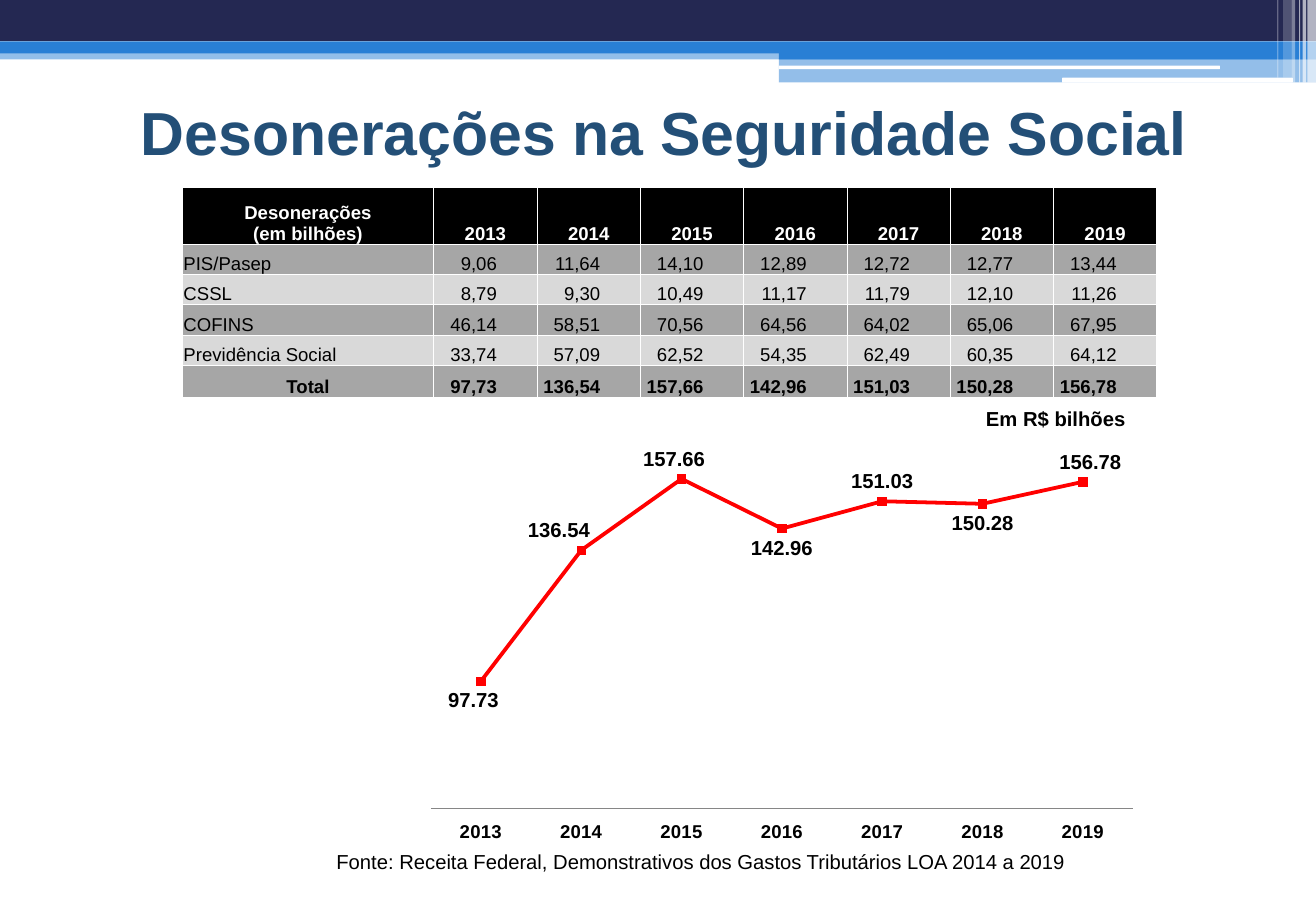
from lxml import etree
from pptx import Presentation
from pptx.chart.data import CategoryChartData
from pptx.dml.color import RGBColor
from pptx.enum.chart import XL_CHART_TYPE, XL_LABEL_POSITION, XL_MARKER_STYLE, XL_TICK_LABEL_POSITION, XL_TICK_MARK
from pptx.enum.shapes import MSO_SHAPE
from pptx.enum.text import MSO_ANCHOR, PP_ALIGN
from pptx.oxml import parse_xml
from pptx.oxml.ns import nsdecls, qn
from pptx.util import Pt

PX = 9144
RECT, ROUNDED = MSO_SHAPE.RECTANGLE, MSO_SHAPE.ROUNDED_RECTANGLE
LEFT, CENTER, RIGHT = PP_ALIGN.LEFT, PP_ALIGN.CENTER, PP_ALIGN.RIGHT
MIDDLE, BOTTOM = MSO_ANCHOR.MIDDLE, MSO_ANCHOR.BOTTOM
ABOVE, BELOW = XL_LABEL_POSITION.ABOVE, XL_LABEL_POSITION.BELOW
LINE_MARKERS, SQUARE = XL_CHART_TYPE.LINE_MARKERS, XL_MARKER_STYLE.SQUARE
NO_TICK, LOW = XL_TICK_MARK.NONE, XL_TICK_LABEL_POSITION.LOW

NAVY = RGBColor(0x24, 0x28, 0x52)
BLUE = RGBColor(0x29, 0x7F, 0xD5)
TITLE_BLUE = RGBColor(0x23, 0x4F, 0x77)
WHITE = RGBColor(0xFF, 0xFF, 0xFF)
BLACK = RGBColor(0, 0, 0)
DARK_BAND = RGBColor(0xA6, 0xA6, 0xA6)
LIGHT_BAND = RGBColor(0xD9, 0xD9, 0xD9)
AXIS_GRAY = RGBColor(0x86, 0x86, 0x86)
RED = RGBColor(0xFF, 0, 0)


def set_font(font, size, color=BLACK, bold=False):
    font.name = "Arial"
    font.size = Pt(size)
    font.bold = bold
    font.color.rgb = color


def place(layout, mode="factor", **fractions):
    manual = etree.SubElement(layout, qn("c:manualLayout"))
    if "w" in fractions:
        etree.SubElement(manual, qn("c:layoutTarget")).set("val", "inner")
    for axis in "xy":
        etree.SubElement(manual, qn(f"c:{axis}Mode")).set("val", mode)
    for name, fraction in fractions.items():
        etree.SubElement(manual, qn(f"c:{name}")).set("val", str(fraction))


deck = Presentation()
deck.slide_width, deck.slide_height = 1083 * PX, 750 * PX
slide = deck.slides.add_slide(deck.slide_layouts[5])

banner = [
    (RECT, 0, 40, 1083, 9, BLUE, 50),
    (RECT, 0, 0, 1083, 34, NAVY, 100),
    (RECT, 0, 34, 1083, 10, BLUE, 100),
    (RECT, 641, 39, 442, 10, BLUE, 100),
    (RECT, 641, 48, 442, 20, BLUE, 50),
    (ROUNDED, 641, 54, 363, 3, WHITE, 100),
    (ROUNDED, 874, 64, 190, 4, WHITE, 100),
    (RECT, 1076, 0, 7, 68, WHITE, 65),
    (RECT, 1072, 0, 3, 68, WHITE, 65),
    (RECT, 1069, 0, 1, 68, WHITE, 60),
    (RECT, 1063, 0, 3, 68, WHITE, 40),
    (RECT, 1056, 0, 7, 64, WHITE, 20),
    (RECT, 1051, 0, 1, 64, WHITE, 30),
]
for kind, left, top, width, height, color, opacity in banner:
    stripe = slide.shapes.add_shape(kind, left * PX, top * PX, width * PX, height * PX)
    stripe.shadow.inherit = False
    stripe.line.fill.background()
    stripe.fill.solid()
    stripe.fill.fore_color.rgb = color
    if opacity < 100:
        tint = stripe.fill._xPr.find(".//" + qn("a:srgbClr"))
        etree.SubElement(tint, qn("a:alpha")).set("val", str(opacity * 1000))

heading = slide.shapes.title
heading.left, heading.top, heading.width, heading.height = 59 * PX, 78 * PX, 975 * PX, 60 * PX
heading.text_frame.text = "Desonerações na Seguridade Social"
heading.text_frame.vertical_anchor = MIDDLE
heading.text_frame.paragraphs[0].alignment = CENTER
set_font(heading.text_frame.paragraphs[0].runs[0].font, 36, TITLE_BLUE, True)

source_note = slide.shapes.add_textbox(267 * PX, 694 * PX, 625 * PX, 30 * PX).text_frame
source_note.word_wrap = False
source_note.text = "Fonte: Receita Federal, Demonstrativos dos Gastos Tributários LOA 2014 a 2019"
set_font(source_note.paragraphs[0].runs[0].font, 12)

years = [str(year) for year in range(2013, 2020)]
rows = [
    ["Desonerações\n(em bilhões)"] + years,
    ["PIS/Pasep", "9,06", "11,64", "14,10", "12,89", "12,72", "12,77", "13,44"],
    ["CSSL", "8,79", "9,30", "10,49", "11,17", "11,79", "12,10", "11,26"],
    ["COFINS", "46,14", "58,51", "70,56", "64,56", "64,02", "65,06", "67,95"],
    ["Previdência Social", "33,74", "57,09", "62,52", "54,35", "62,49", "60,35", "64,12"],
    ["Total", "97,73", "136,54", "157,66", "142,96", "151,03", "150,28", "156,78"],
]
TOTAL_ROW = len(rows) - 1
waivers = slide.shapes.add_table(6, 8, 150 * PX, 154 * PX, 799 * PX, 171 * PX).table
for column, width in zip(waivers.columns, [207] + [85] * 7):
    column.width = width * PX
for row, height in zip(waivers.rows, [47, 25, 25, 25, 25, 26]):
    row.height = height * PX

for r, row in enumerate(rows):
    for c, text in enumerate(row):
        cell = waivers.cell(r, c)
        is_amount = r > 0 and c > 0
        cell.text = text
        cell.vertical_anchor = BOTTOM
        cell.margin_left = cell.margin_top = PX
        cell.margin_right = 33 * PX if is_amount else PX
        cell.margin_bottom = 0
        for paragraph in cell.text_frame.paragraphs:
            paragraph.alignment = RIGHT if is_amount else CENTER if r in (0, TOTAL_ROW) else LEFT
            set_font(paragraph.runs[0].font, 11, BLACK if r else WHITE, r in (0, TOTAL_ROW))
        for side in "LRTB":
            cell._tc.get_or_add_tcPr().append(parse_xml(
                f'<a:ln{side} {nsdecls("a")} w="6350"><a:solidFill>'
                f'<a:srgbClr val="{WHITE}"/></a:solidFill></a:ln{side}>'))
        cell.fill.solid()
        cell.fill.fore_color.rgb = BLACK if r == 0 else DARK_BAND if r % 2 else LIGHT_BAND

totals = CategoryChartData()
totals.categories = years
totals.add_series("Total", [float(amount.replace(",", ".")) for amount in rows[TOTAL_ROW][1:]])
chart = slide.shapes.add_chart(
    LINE_MARKERS, 338 * PX, 328 * PX, 611 * PX, 381 * PX, totals).chart
chart.has_legend = False
chart.font.name = "Cambria"
chart.font.size = Pt(10)
chart.font.color.rgb = BLACK

unit = chart.chart_title.text_frame
unit.text = "Em R$ bilhões"
set_font(unit.paragraphs[0].runs[0].font, 12, bold=True)
title_element = chart._chartSpace.find(".//" + qn("c:title"))
place(title_element.find(qn("c:layout")), "edge", x=0.77, y=0.01)

plot_area = chart._chartSpace.find(".//" + qn("c:plotArea"))
plot_layout = plot_area.find(qn("c:layout"))
if plot_layout is None:
    plot_layout = etree.Element(qn("c:layout"))
    plot_area.insert(0, plot_layout)
place(plot_layout, "edge", x=0.027, y=0.084, w=0.946, h=0.803)

amounts_axis = chart.value_axis
amounts_axis.minimum_scale, amounts_axis.maximum_scale = 60, 170
amounts_axis.has_major_gridlines = False
amounts_axis.visible = False
years_axis = chart.category_axis
years_axis.major_tick_mark = NO_TICK
years_axis.tick_label_position = LOW
years_axis.format.line.color.rgb = AXIS_GRAY
set_font(years_axis.tick_labels.font, 11, bold=True)

chart.plots[0].vary_by_categories = False
total_line = chart.plots[0].series[0]
total_line.smooth = False
total_line.format.line.color.rgb = RED
total_line.format.line.width = Pt(2.25)
total_line.marker.style = SQUARE
total_line.marker.size = 5
total_line.marker.format.fill.solid()
total_line.marker.format.fill.fore_color.rgb = RED
total_line.marker.format.line.color.rgb = RED

label_spots = [(BELOW, -0.01), (ABOVE, -0.03), (ABOVE, -0.01), (BELOW, 0),
               (ABOVE, 0), (BELOW, 0), (ABOVE, 0.01)]
for i, (position, shift) in enumerate(label_spots):
    label = total_line.points[i].data_label
    set_font(label.font, 12, bold=True)
    label.position = position
    if shift:
        label_element = label._get_or_add_dLbl()
        label_layout = etree.Element(qn("c:layout"))
        label_element.insert(1, label_layout)
        place(label_layout, x=shift, y=0)

deck.save("out.pptx")
